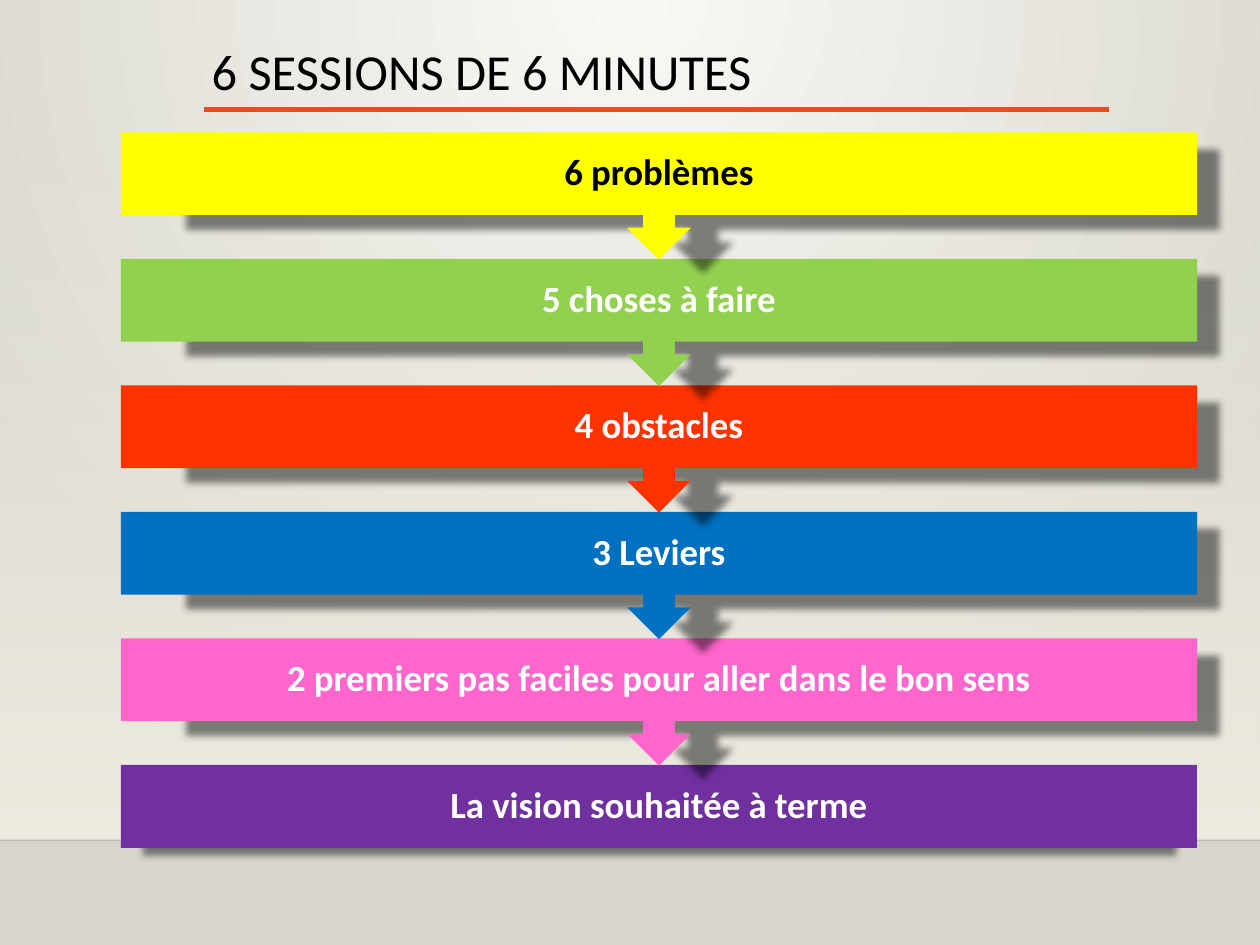
from dataclasses import dataclass

from lxml.etree import SubElement
from pptx import Presentation
from pptx.dml.color import RGBColor
from pptx.enum.shapes import MSO_CONNECTOR as Link, MSO_SHAPE as Form
from pptx.enum.text import MSO_ANCHOR as Anchor, PP_ALIGN as Align
from pptx.oxml import parse_xml
from pptx.oxml.ns import nsdecls, qn
from pptx.util import Inches, Pt

WIDE, HIGH = 10, 7.5
LEFT, TOP, SPAN = 0.96, 1.05, 8.54
STEP, BODY = 1.004, 0.66
FLOOR = 6.67


@dataclass
class Stage:
    text: str
    fill: str
    ink: str = "FFFFFF"


STAGES = [
    Stage("6 problèmes", "FFFF00", "000000"),
    Stage("5 choses à faire", "92D050"),
    Stage("4 obstacles", "FF3300"),
    Stage("3 Leviers", "0070C0"),
    Stage("2 premiers pas faciles pour aller dans le bon sens", "FF66CC"),
    Stage("La vision souhaitée à terme", "7030A0"),
]


def rgb(code: str) -> RGBColor:
    return RGBColor.from_string(code)


def box(*sides: float) -> list:
    return [Inches(side) for side in sides]


def grad(stops: list, shade: str):
    """Gradient fill from (position, colour, alpha) stops, in percent."""
    marks = "".join(
        f'<a:gs pos="{pos * 1000}"><a:srgbClr val="{code}">'
        f'<a:alpha val="{alpha * 1000}"/></a:srgbClr></a:gs>'
        for pos, code, alpha in stops)
    return parse_xml(f'<a:gradFill {nsdecls("a")} rotWithShape="1">'
                     f'<a:gsLst>{marks}</a:gsLst>{shade}</a:gradFill>')


def swap(fill, new) -> None:
    """Put a hand-made gradient in place of a fresh one."""
    fill.gradient()
    old = fill._fill._gradFill
    old.getparent().replace(old, new)


def rule(shapes, x: float, y: float, end: float, code: str, size: float, alpha: int = 100) -> None:
    line = shapes.add_connector(Link.STRAIGHT, *box(x, y, end, y))
    line.line.color.rgb = rgb(code)
    line.line.width = Pt(size)
    props = line._element.spPr
    tint = props.find(".//" + qn("a:srgbClr"))
    SubElement(tint, qn("a:alpha"), val=str(alpha * 1000))
    SubElement(props, qn("a:effectLst"))


def shade(shape) -> None:
    """Soft shadow just below a shape, a little smaller than it."""
    shape.shadow.inherit = False
    glow = SubElement(
        shape._element.spPr.find(qn("a:effectLst")), qn("a:outerShdw"),
        blurRad=str(Pt(4)), dist=str(Pt(4)), dir="5400000",
        sx="96000", sy="96000", rotWithShape="0")
    tint = SubElement(glow, qn("a:srgbClr"), val="000000")
    SubElement(tint, qn("a:alpha"), val="48000")


def write(frame, text: str, ink: str, size: float, align, bold: bool = False) -> None:
    frame.text = text
    frame.word_wrap = True
    frame.vertical_anchor = Anchor.MIDDLE
    para = frame.paragraphs[0]
    para.alignment = align
    para.line_spacing = 0.9
    font = para.runs[0].font
    for key, val in {"name": "Calibri", "size": Pt(size), "bold": bold}.items():
        setattr(font, key, val)
    font.color.rgb = rgb(ink)


def draw(shapes, row: int, stage: Stage) -> None:
    top, last = TOP + row * STEP, row == len(STAGES) - 1
    form, tall = (Form.RECTANGLE, BODY) if last else (Form.UP_ARROW_CALLOUT, 1.01)
    block = shapes.add_shape(form, *box(LEFT, top, SPAN, tall))
    block.rotation = 0 if last else 180
    block.fill.solid()
    block.fill.fore_color.rgb = rgb(stage.fill)
    block.line.fill.background()
    shade(block)
    frame = shapes.add_textbox(*box(LEFT, top, SPAN, BODY)).text_frame
    for side in ("left", "right", "top", "bottom"):
        setattr(frame, f"margin_{side}", Inches(0.16))
    write(frame, stage.text, stage.ink, 21, Align.CENTER, True)


def main() -> None:
    deck = Presentation()
    deck.slide_width, deck.slide_height = box(WIDE, HIGH)
    slide = deck.slides.add_slide(deck.slide_layouts[5])
    shapes = slide.shapes

    swap(slide.background.fill, grad(
        [(0, "F9F8F5", 100), (100, "D8D6CC", 100)],
        '<a:path path="circle"><a:fillToRect l="43000" r="43000" b="100000"/></a:path>'))
    wall = shapes.add_shape(Form.RECTANGLE, *box(0, 1.09, WIDE, FLOOR - 1.09))
    swap(wall.fill, grad([(0, "EEECE1", 0), (100, "EEECE1", 100)],
                         '<a:lin ang="5400000" scaled="0"/>'))
    wall.line.fill.background()
    wall.shadow.inherit = False
    rule(shapes, 0, FLOOR, WIDE, "000001", 1, 20)
    rule(shapes, 1.62, 0.87, 8.8, "E84C22", 2.5)

    title = shapes.title
    title.left, title.top, title.width, title.height = box(1.58, 0.3, 7.19, 0.57)
    write(title.text_frame, "6 SESSIONS DE 6 MINUTES", "000000", 28.8, Align.LEFT)

    chain = shapes.add_group_shape().shapes
    for row, stage in reversed(list(enumerate(STAGES))):
        draw(chain, row, stage)
    deck.save("out.pptx")


if __name__ == "__main__":
    main()
